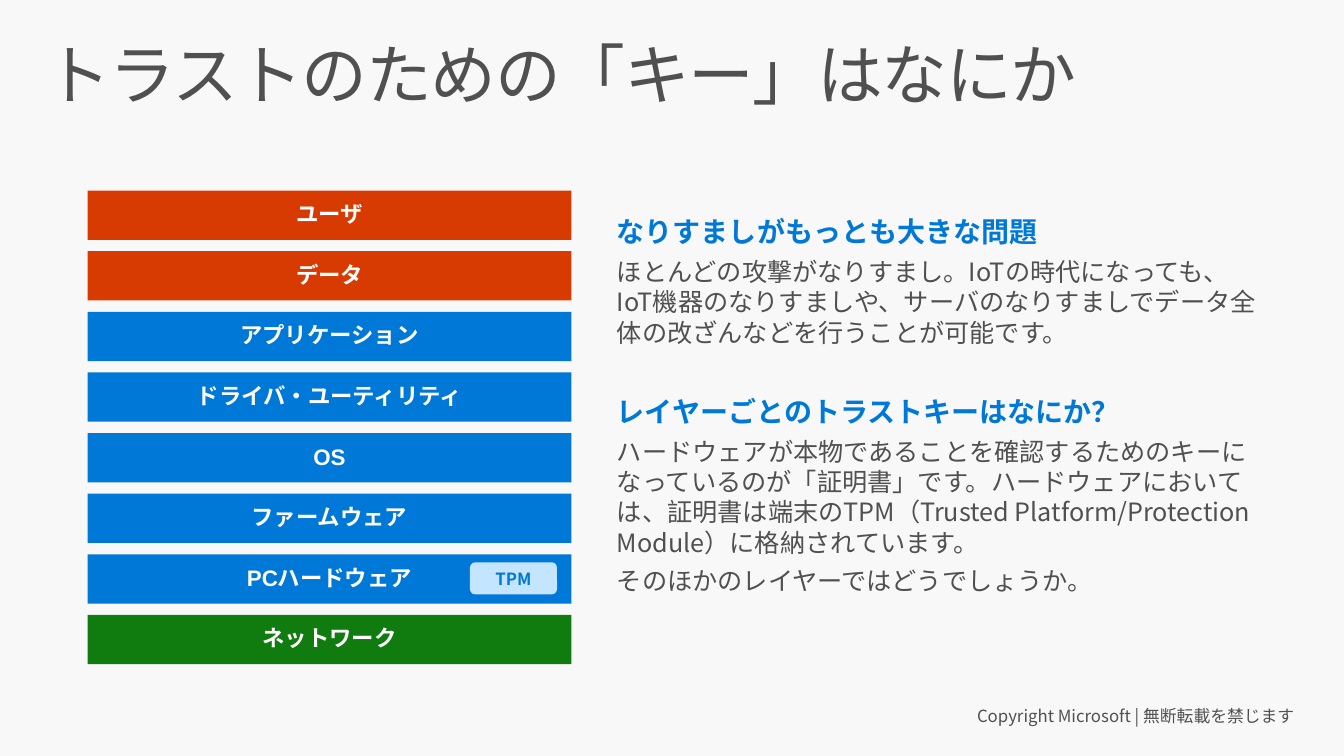
from dataclasses import dataclass

from lxml.etree import SubElement
from pptx import Presentation
from pptx.dml.color import RGBColor as RGB
from pptx.enum.shapes import MSO_SHAPE as SHAPE
from pptx.enum.text import MSO_ANCHOR as ANCHOR, PP_ALIGN as ALIGN
from pptx.oxml.ns import qn
from pptx.util import Pt


@dataclass(frozen=True)
class Theme:
    background: str = "F8F8F8"
    text: str = "505050"
    white: str = "FFFFFF"
    blue: str = "0078D7"
    pale_blue: str = "C4E5FF"
    red: str = "D83B01"
    green: str = "107C10"
    font: str = "Noto Sans CJK JP"
    layer_font: str = "Arial"
    title_size: float = 47
    heading_size: float = 20
    body_size: float = 18
    layer_size: float = 16
    small_size: float = 12


@dataclass(frozen=True)
class Box:
    left: float
    top: float
    width: float
    height: float


@dataclass(frozen=True)
class Style:
    size: float
    color: str
    bold: bool = False
    font: str = "Noto Sans CJK JP"
    tracking: float = 0


@dataclass(frozen=True)
class Para:
    text: str
    style: Style
    align: ALIGN = ALIGN.LEFT
    spacing: float = 1.0
    before: float = 0
    after: float = 0


@dataclass(frozen=True)
class Layer:
    name: str
    color: str


T = Theme()
TITLE = Style(T.title_size, T.text, tracking=-1)
HEADING = Style(T.heading_size, T.blue, bold=True)
BODY = Style(T.body_size, T.text)
LAYER = Style(T.layer_size, T.white, bold=True, font=T.layer_font)
CHIP = Style(T.small_size, T.blue, bold=True)
FOOTER = Style(T.small_size, T.text)

LAYERS = [
    Layer("ユーザ", T.red),
    Layer("データ", T.red),
    Layer("アプリケーション", T.blue),
    Layer("ドライバ・ユーティリティ", T.blue),
    Layer("OS", T.blue),
    Layer("ファームウェア", T.blue),
    Layer("PCハードウェア", T.blue),
    Layer("ネットワーク", T.green),
]
STACK = Box(62.6, 136.2, 345.6, 35.2)  # top layer
LAYER_PITCH = 43.3

EXPLANATION = [
    Para("なりすましがもっとも大きな問題", HEADING, spacing=1.5, after=6),
    Para("ほとんどの攻撃がなりすまし。IoTの時代になっても、IoT機器のなりすましや、"
         "サーバのなりすましでデータ全体の改ざんなどを行うことが可能です。", BODY, after=6),
    Para("レイヤーごとのトラストキーはなにか？", HEADING, before=27.6, after=6),
    Para("ハードウェアが本物であることを確認するためのキーになっているのが「証明書」です。"
         "ハードウェアにおいては、証明書は端末のTPM（Trusted Platform/Protection Module）に"
         "格納されています。", BODY, after=6),
    Para("そのほかのレイヤーではどうでしょうか。", BODY, after=6),
]


def write(sp, paras: list[Para], inset_x: float = 14.4, inset_y: float = 11.5,
          anchor: ANCHOR = ANCHOR.TOP, wrap: bool = True) -> None:
    tf = sp.text_frame
    tf.word_wrap = wrap
    tf.vertical_anchor = anchor
    tf.margin_left = tf.margin_right = Pt(inset_x)
    tf.margin_top = tf.margin_bottom = Pt(inset_y)
    for i, para in enumerate(paras):
        p = tf.add_paragraph() if i else tf.paragraphs[0]
        p.alignment = para.align
        p.line_spacing = para.spacing
        p.space_after = Pt(para.after)
        if para.before:
            p.space_before = Pt(para.before)
        r = p.add_run()
        r.text = para.text
        style = para.style
        r.font.size = Pt(style.size)
        r.font.bold = style.bold
        r.font.name = style.font
        r.font.color.rgb = RGB.from_string(style.color)
        # East Asian typeface and character spacing
        props = r._r.get_or_add_rPr()
        SubElement(props, qn("a:ea")).set("typeface", T.font)
        if style.tracking:
            props.set("spc", str(round(style.tracking * 100)))


def add_text(slide, box: Box, paras: list[Para], **frame) -> None:
    sp = slide.shapes.add_textbox(Pt(box.left), Pt(box.top), Pt(box.width), Pt(box.height))
    write(sp, paras, **frame)


def add_block(slide, kind: SHAPE, box: Box, fill: str, para: Para) -> None:
    sp = slide.shapes.add_shape(kind, Pt(box.left), Pt(box.top), Pt(box.width), Pt(box.height))
    sp.shadow.inherit = False
    sp.fill.solid()
    sp.fill.fore_color.rgb = RGB.from_string(fill)
    sp.line.fill.background()
    write(sp, [para], anchor=ANCHOR.MIDDLE)


def main() -> None:
    prs = Presentation()
    prs.slide_width, prs.slide_height = Pt(960), Pt(540)
    slide = prs.slides.add_slide(prs.slide_layouts[6])
    slide.background.fill.solid()
    slide.background.fill.fore_color.rgb = RGB.from_string(T.background)

    # Footer and title
    add_text(slide, Box(679, 499, 260, 36),
             [Para("Copyright Microsoft | 無断転載を禁じます", FOOTER, ALIGN.RIGHT, 0.9, after=6)],
             wrap=False)
    add_text(slide, Box(20.9, 23, 918, 70.6),
             [Para("トラストのための「キー」はなにか", TITLE, spacing=0.9)],
             inset_x=11.5, inset_y=7.2)

    # Layer stack
    for i, layer in enumerate(LAYERS):
        box = Box(STACK.left, STACK.top + i * LAYER_PITCH, STACK.width, STACK.height)
        add_block(slide, SHAPE.RECTANGLE, box, layer.color,
                  Para(layer.name, LAYER, ALIGN.CENTER, 0.9))

    # TPM chip on the hardware layer
    add_block(slide, SHAPE.ROUNDED_RECTANGLE, Box(335.7, 401.6, 62.2, 23), T.pale_blue,
              Para("TPM", CHIP, ALIGN.CENTER))

    # Explanation
    add_text(slide, Box(426.2, 129.6, 490.3, 336.2), EXPLANATION)

    prs.save("out.pptx")


if __name__ == "__main__":
    main()
